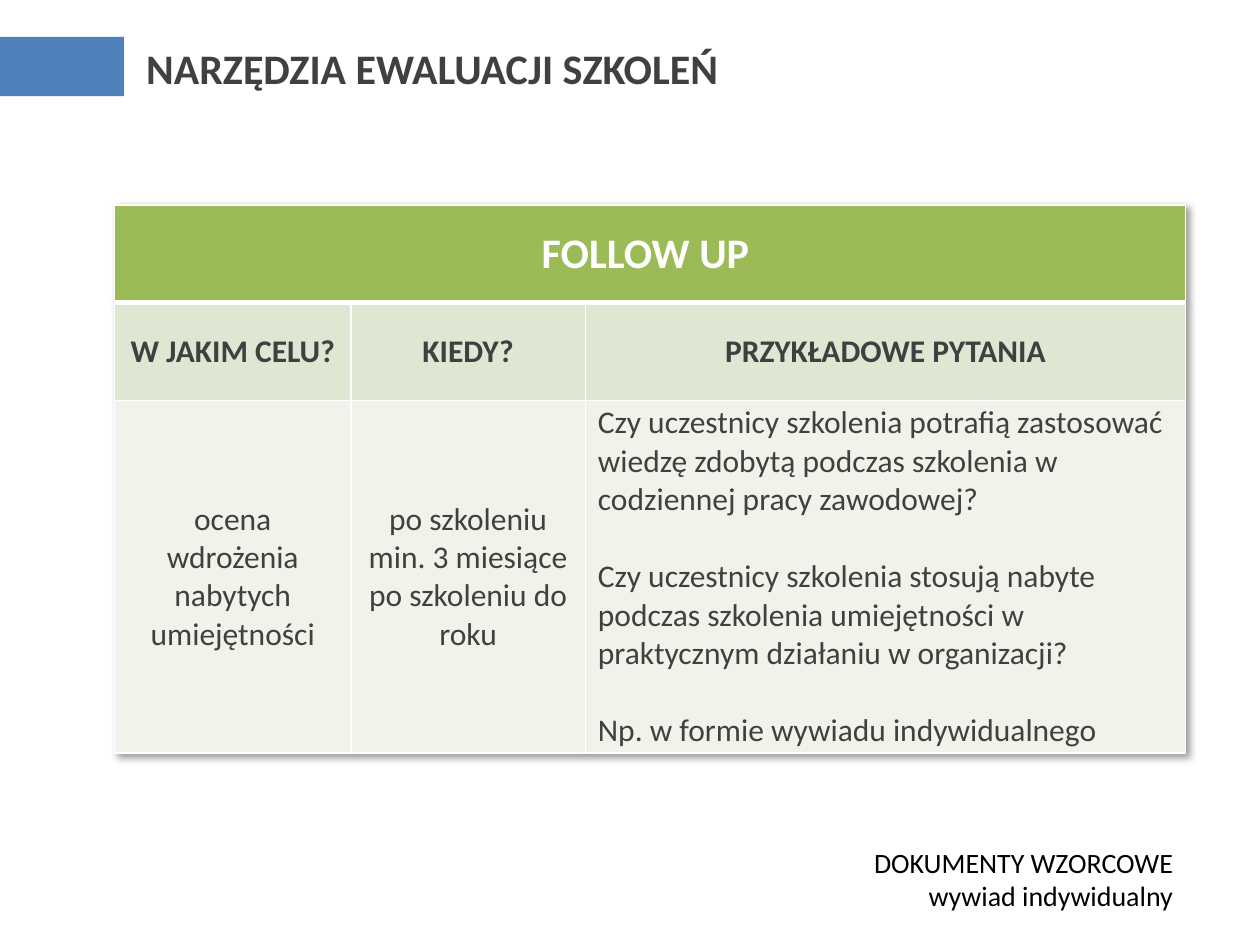
from lxml.etree import SubElement
from pptx import Presentation
from pptx.dml.color import RGBColor
from pptx.enum.shapes import MSO_SHAPE
from pptx.enum.text import MSO_ANCHOR, PP_ALIGN
from pptx.oxml import parse_xml
from pptx.oxml.ns import nsdecls, qn
from pptx.util import Pt

COLORS = {
    "accent": "4F81BD", "header": "9BBB59", "subheader": "DEE7D1", "body": "EFF3EA",
    "white": "FFFFFF", "gray": "404040", "black": "000000",
}
COLUMN_WIDTHS = (135, 134, 343)
ROW_HEIGHTS = (56, 56, 201)
LINE_GAP = 22

HEADINGS = ("W JAKIM CELU?", "KIEDY?", "PRZYKŁADOWE PYTANIA")
PURPOSE = "ocena wdrożenia nabytych umiejętności"
TIMING = "po szkoleniu min. 3 miesiące po szkoleniu do roku"
QUESTIONS = (
    "Czy uczestnicy szkolenia potrafią zastosować wiedzę zdobytą podczas szkolenia "
    "w codziennej pracy zawodowej?",
    "Czy uczestnicy szkolenia stosują nabyte podczas szkolenia umiejętności "
    "w praktycznym działaniu w organizacji?",
    "Np. w formie wywiadu indywidualnego",
)


def rgb(name):
    return RGBColor.from_string(COLORS[name])


def write_text(frame, *lines, size=18, color="gray", bold=False,
               align=PP_ALIGN.CENTER, gap=0):
    """Write one paragraph per line, with a gap in points between them."""
    for index, line in enumerate(lines):
        para = frame.paragraphs[0] if index == 0 else frame.add_paragraph()
        para.alignment = align
        para.space_before = Pt(gap if index else 0)
        span = para.add_run()
        span.text = line
        span.font.name = "Calibri"
        span.font.size = Pt(size)
        span.font.bold = bold
        span.font.color.rgb = rgb(color)


def add_text_box(page, left, top, width, height, *lines, **text_format):
    box = page.shapes.add_textbox(Pt(left), Pt(top), Pt(width), Pt(height))
    box.text_frame.word_wrap = False
    write_text(box.text_frame, *lines, **text_format)


def add_accent_bar(page):
    bar = page.shapes.add_shape(MSO_SHAPE.RECTANGLE, Pt(0), Pt(21), Pt(70.8), Pt(34))
    bar.shadow.inherit = False
    bar.fill.solid()
    bar.fill.fore_color.rgb = rgb("accent")
    bar.line.fill.background()


def set_borders(cell, bottom=1):
    properties = cell._tc.get_or_add_tcPr()
    widths = {"a:lnL": 1, "a:lnR": 1, "a:lnT": 1, "a:lnB": bottom}
    for position, (tag, width) in enumerate(widths.items()):
        line = parse_xml(
            f'<{tag} {nsdecls("a")} w="{Pt(width)}"><a:solidFill>'
            f'<a:srgbClr val="{COLORS["white"]}"/></a:solidFill></{tag}>')
        properties.insert(position, line)


def fill_cell(cell, fill, *lines, bottom=1, **text_format):
    cell.fill.solid()
    cell.fill.fore_color.rgb = rgb(fill)
    cell.vertical_anchor = MSO_ANCHOR.MIDDLE
    cell.margin_top = cell.margin_bottom = Pt(1.8)
    set_borders(cell, bottom)
    write_text(cell.text_frame, *lines, **text_format)


def add_table_shadow(table):
    properties = table._tbl.tblPr
    for child in list(properties):
        properties.remove(child)
    effects = SubElement(properties, qn("a:effectLst"))
    effects.append(parse_xml(
        f'<a:outerShdw {nsdecls("a")} blurRad="{Pt(4)}" dist="{Pt(3)}" dir="2700000" '
        'algn="tl" rotWithShape="0"><a:prstClr val="black"><a:alpha val="40000"/>'
        '</a:prstClr></a:outerShdw>'))


def add_evaluation_table(page):
    table = page.shapes.add_table(
        len(ROW_HEIGHTS), len(COLUMN_WIDTHS), Pt(65.5), Pt(117),
        Pt(sum(COLUMN_WIDTHS)), Pt(sum(ROW_HEIGHTS))).table
    table.first_row = table.horz_banding = False
    add_table_shadow(table)
    for column, width in zip(table.columns, COLUMN_WIDTHS):
        column.width = Pt(width)
    for row, height in zip(table.rows, ROW_HEIGHTS):
        row.height = Pt(height)

    table.cell(0, 0).merge(table.cell(0, 2))
    fill_cell(table.cell(0, 0), "header", "FOLLOW UP ", bottom=3,
              size=24, color="white", bold=True)
    for index, heading in enumerate(HEADINGS):
        fill_cell(table.cell(1, index), "subheader", heading, bold=True)
    fill_cell(table.cell(2, 0), "body", PURPOSE)
    fill_cell(table.cell(2, 1), "body", TIMING)
    fill_cell(table.cell(2, 2), "body", *QUESTIONS, align=PP_ALIGN.LEFT, gap=LINE_GAP)


def main():
    deck = Presentation()
    deck.slide_width, deck.slide_height = Pt(720), Pt(540)
    page = deck.slides.add_slide(deck.slide_layouts[6])
    add_accent_bar(page)
    add_evaluation_table(page)
    add_text_box(page, 76.5, 21, 344, 36, "NARZĘDZIA EWALUACJI SZKOLEŃ",
                 size=24, bold=True, align=PP_ALIGN.LEFT)
    add_text_box(page, 489.5, 479.5, 188, 46, "DOKUMENTY WZORCOWE", "wywiad indywidualny",
                 size=16, color="black", align=PP_ALIGN.RIGHT)
    deck.save("out.pptx")


if __name__ == "__main__":
    main()
